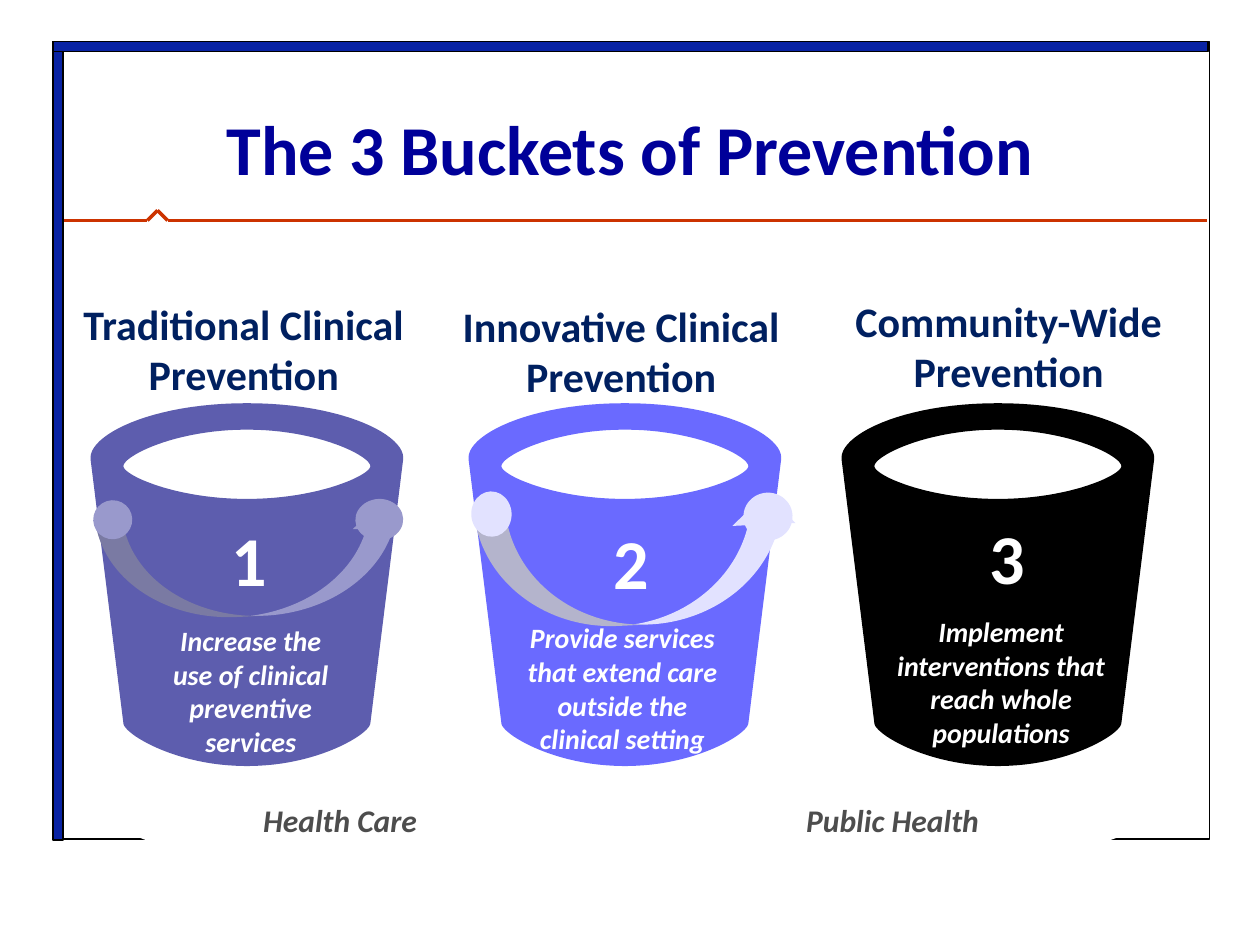
from lxml import etree
from pptx import Presentation
from pptx.dml.color import RGBColor
from pptx.enum.shapes import MSO_CONNECTOR, MSO_SHAPE
from pptx.enum.text import MSO_ANCHOR, MSO_AUTO_SIZE, PP_ALIGN
from pptx.oxml.ns import qn
from pptx.util import Inches, Pt

RECT, OVAL, ARC = MSO_SHAPE.RECTANGLE, MSO_SHAPE.OVAL, MSO_SHAPE.CURVED_UP_ARROW
STRAIGHT = MSO_CONNECTOR.STRAIGHT
TOP, MID, LOW = MSO_ANCHOR.TOP, MSO_ANCHOR.MIDDLE, MSO_ANCHOR.BOTTOM
LEFT, CENTER = PP_ALIGN.LEFT, PP_ALIGN.CENTER
GROW = MSO_AUTO_SIZE.SHAPE_TO_FIT_TEXT

# The grid has 100 columns and 75 rows
WIDE, HIGH = Inches(10), Inches(7.5)
COL, ROW = WIDE / 100, HIGH / 75

COLORS = {
    "title": "000099", "label": "002060", "note": "4D4D4D", "white": "FFFFFF",
    "black": "000000", "bar": "0923A3", "rule": "CC3300",
    "one": "5D5DAE", "grip one": "9999CC",
    "two": "6A6AFF", "grip two": "E2E2FF",
}

# Font formats, with the size in points
FORMATS = {
    "title": {"size": Pt(40), "bold": True},
    "label": {"size": Pt(24), "bold": True},
    "digit": {"size": Pt(40), "bold": True},
    "aim": {"size": Pt(16), "bold": True, "italic": True},
    "note": {"size": Pt(18), "bold": True, "italic": True},
}

# Each bucket: centre column, fill, then text and box of label, digit and aim
BUCKETS = [
    (19.6, "one",
     ("Traditional Clinical Prevention", (5, 24.4, 28.7, 6.5)),
     ("1", (18.1, 41.4, 3.7, 5.9)),
     ("Increase the use of clinical preventive services", (11.8, 49, 16.2, 9.6))),
    (49.6, "two",
     ("Innovative Clinical Prevention", (36, 24.6, 26.6, 6.5)),
     ("2", (48.4, 41.6, 3.7, 5.9)),
     ("Provide services that extend care outside the clinical setting",
      (40, 48.8, 18.8, 9.6))),
    (79.2, "black",
     ("Community-Wide Prevention", (63.5, 24.2, 33.1, 6.5)),
     ("3", (78.2, 41.2, 3.7, 5.9)),
     ("Implement interventions that reach whole populations",
      (69.4, 48.3, 20.1, 9.6))),
]
BRIM = 32   # row of the bucket tops
TILT = 357.3

# Left halves of the bucket outlines, as curves from the centre of the brim
BODY = [((0, 0), (-7.7, 0), (-12.7, 2.6), (-12.4, 4.5)),
        ((-9.8, 25.4), (-9.8, 26.2), (-5.7, 28.8), (0, 28.8))]
MOUTH = [((0, 7.6), (-5.7, 7.6), (-9.8, 5.7), (-9.8, 5)),
         ((-9.8, 5), (-9.8, 4.2), (-5.7, 2.1), (0, 2.1))]


def tint(name):
    return RGBColor.from_string(COLORS[name])


def place(box):
    x, y, w, h = box
    return round(x * COL), round(y * ROW), round(w * COL), round(h * ROW)


def paint(shape, fill, edge=None):
    shape.shadow.inherit = False
    if fill:
        shape.fill.solid()
        shape.fill.fore_color.rgb = tint(fill)
    else:
        shape.fill.background()
    if edge:
        shape.line.color.rgb = tint(edge)
        shape.line.width = Pt(1)
    else:
        shape.line.fill.background()


def form(slide, kind, box, fill, edge=None, turn=0):
    shape = slide.shapes.add_shape(kind, *place(box))
    shape.rotation = turn
    paint(shape, fill, edge)


def rule(slide, start, end):
    ends = [round(n) for x, y in (start, end) for n in (x * COL, y * ROW)]
    line = slide.shapes.add_connector(STRAIGHT, *ends)
    line.line.color.rgb = tint("rule")
    line.line.width = Pt(2)
    etree.SubElement(line._element.spPr, qn("a:effectLst"))


def write(slide, text, box, style, color, align=CENTER, anchor=TOP,
          pad=(0.1, 0.05), grow=True):
    frame = slide.shapes.add_textbox(*place(box)).text_frame
    frame.word_wrap = True
    frame.vertical_anchor = anchor
    frame.margin_left = frame.margin_right = Inches(pad[0])
    frame.margin_top = frame.margin_bottom = Inches(pad[1])
    if grow:
        frame.auto_size = GROW
    para = frame.paragraphs[0]
    para.alignment = align
    run = para.add_run()
    run.text = text
    run.font.name = "Calibri"
    run.font.color.rgb = tint(color)
    for key, value in FORMATS[style].items():
        setattr(run.font, key, value)
    return para


def curve(points, steps=24):
    """Points along a cubic curve."""
    for i in range(steps + 1):
        t = i / steps
        parts = ((1 - t) ** 3, 3 * t * (1 - t) ** 2, 3 * t * t * (1 - t), t ** 3)
        yield tuple(sum(p * q[k] for p, q in zip(parts, points)) for k in (0, 1))


def ring(half, mid):
    """A half outline and its mirror, placed on the grid."""
    left = [p for part in half for p in curve(part)]
    right = [(-x, y) for x, y in reversed(left)]
    return [((mid + x) * COL, (BRIM + y) * ROW) for x, y in left + right]


def bucket(slide, mid, fill):
    body, mouth = ring(BODY, mid), ring(MOUTH, mid)
    path = slide.shapes.build_freeform(*body[0])
    path.add_line_segments(body[1:], close=True)
    path.move_to(*mouth[0])
    path.add_line_segments(mouth[1:], close=True)
    paint(path.convert_to_shape(), fill)


def border(slide):
    # Red rule with a small peak
    stops = [(4.2, 17.5), (11.7, 17.5), (12.5, 16.7), (13.3, 17.5), (95.8, 17.5)]
    for start, end in zip(stops, stops[1:]):
        rule(slide, start, end)
    # Page frame with its left and top bars
    form(slide, RECT, (4.2, 3.3, 91.8, 63.3), None, "black")
    form(slide, RECT, (4.2, 3.3, 0.8, 63.4), "bar", "black")
    form(slide, RECT, (4.2, 3.3, 91.7, 0.8), "bar", "black")


def main():
    deck = Presentation()
    deck.slide_width, deck.slide_height = WIDE, HIGH
    slide = deck.slides.add_slide(deck.slide_layouts[6])

    border(slide)
    title = write(slide, "The 3 Buckets of Prevention", (5, 3, 90, 12.5),
                  "title", "title", anchor=LOW, grow=False)
    title.line_spacing = Pt(40)

    # Two overlapping fields of care open the frame at its foot
    for x, w in ((9.3, 47.2), (41.5, 49)):
        form(slide, OVAL, (x, 61.1, w, 7.8), "white")
    for text, x, w in (("Health Care", 19.9, 21.7), ("Public Health", 63, 19.1)):
        write(slide, text, (x, 63.1, w, 3.3), "note", "note", LEFT)

    for mid, fill, *_ in BUCKETS:
        bucket(slide, mid, fill)

    # Handles: a curved grip with a knob at each end
    form(slide, ARC, (37.8, 39.6, 25.8, 10), "grip two", turn=TILT)
    form(slide, ARC, (7.7, 40.2, 25.1, 8.7), "grip one", turn=TILT)
    form(slide, RECT, (31.4, 40.3, 1.7, 3.3), "white")
    for box, fill in (((59, 39.1, 3.9, 3.8), "grip two"),
                      ((37.4, 39, 3.2, 3.6), "grip two"),
                      ((28.2, 39.6, 3.8, 3.3), "grip one"),
                      ((7.4, 39.7, 3.1, 3.1), "grip one")):
        form(slide, OVAL, box, fill, turn=TILT)

    # Words on and above the buckets
    for _, _, label, digit, aim in BUCKETS:
        write(slide, *label, "label", "label", anchor=MID, pad=(0, 0))
        write(slide, *digit, "digit", "white", LEFT, MID, (0.03, 0.03))
        write(slide, *aim, "aim", "white")

    deck.save("out.pptx")


if __name__ == "__main__":
    main()
